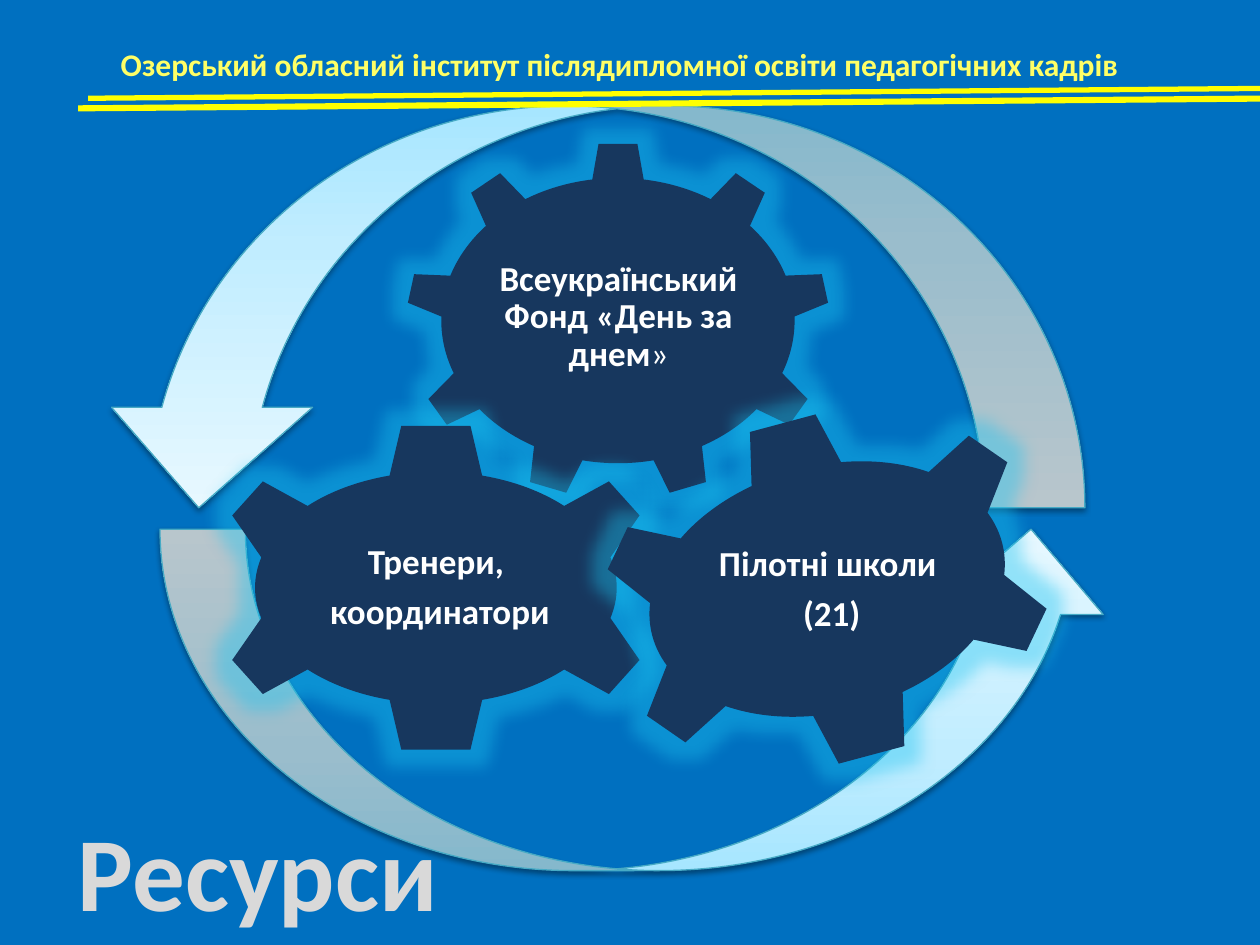
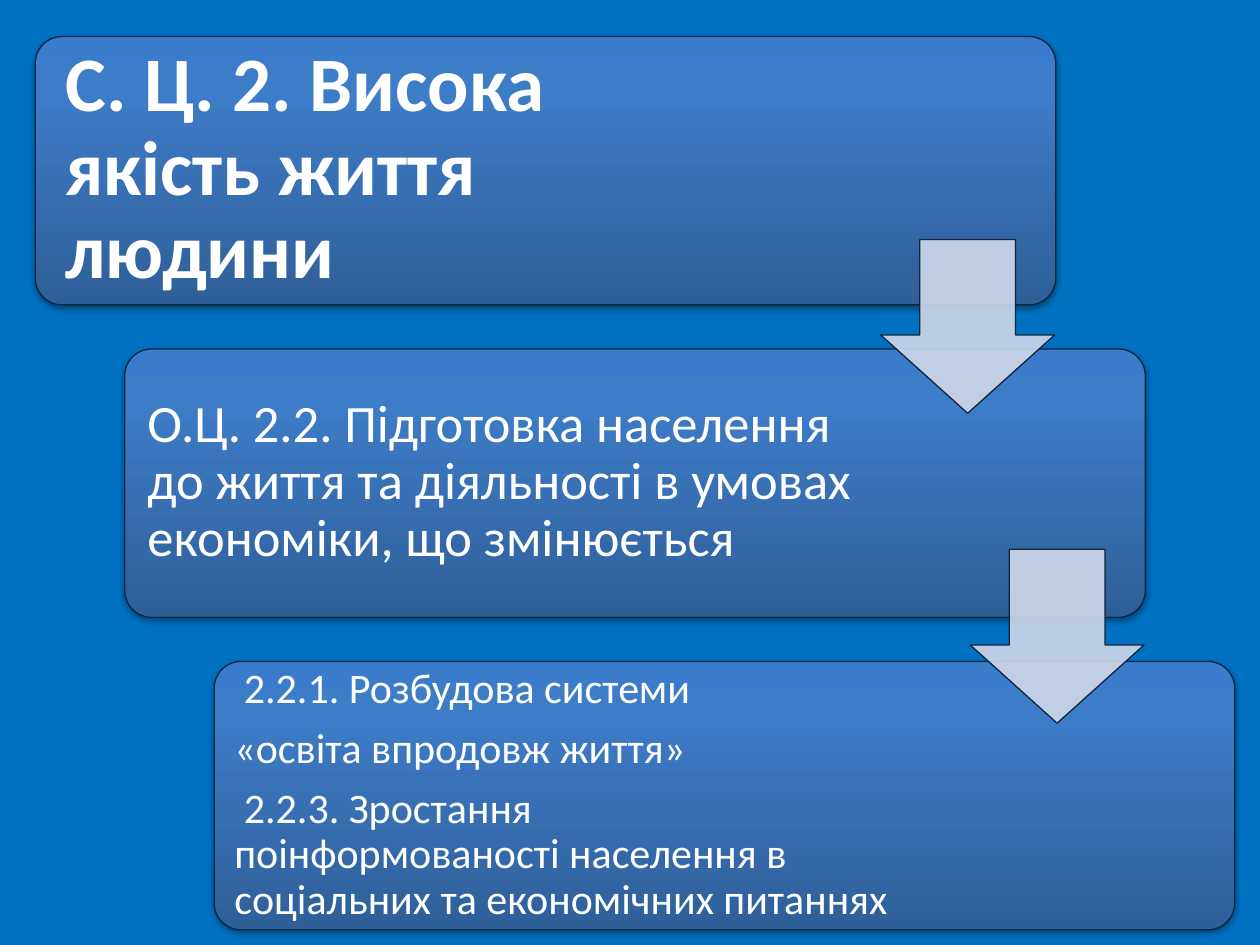
"""Build two slides: a gear cycle of resources and a stepped list of goals."""
from lxml.etree import SubElement
from pptx import Presentation
from pptx.dml.color import RGBColor
from pptx.enum.shapes import MSO_CONNECTOR, MSO_SHAPE
from pptx.enum.text import MSO_ANCHOR, MSO_AUTO_SIZE, PP_ALIGN
from pptx.oxml.ns import qn
from pptx.util import Inches, Pt

BLUE = RGBColor(0x00, 0x70, 0xC0)
NAVY = RGBColor(0x17, 0x37, 0x5E)
INK = RGBColor(0x0F, 0x24, 0x3E)
TEAL = RGBColor(0x46, 0xAA, 0xC5)
CYAN = RGBColor(0x1C, 0xC4, 0xF0)
MIST = RGBColor(0xD0, 0xD8, 0xE8)
GREY = RGBColor(0xD9, 0xD9, 0xD9)
WHITE = RGBColor(0xFF, 0xFF, 0xFF)
BLACK = RGBColor(0x00, 0x00, 0x00)
EDGE = RGBColor(0x00, 0x00, 0x66)
YELLOW = RGBColor(0xFF, 0xFF, 0x00)
LEMON = RGBColor(0xFF, 0xFF, 0x66)
SKY = [(0, RGBColor(0xA7, 0xE6, 0xFF)), (35, RGBColor(0xC1, 0xED, 0xFF)),
       (100, RGBColor(0xE7, 0xF8, 0xFF))]
STEEL = [(0, RGBColor(0x2F, 0x5F, 0x99)), (80, RGBColor(0x3D, 0x7C, 0xC7)),
         (100, RGBColor(0x3A, 0x7C, 0xCB))]
FONT = "Calibri"

HEAD = "Озерський обласний інститут післядипломної освіти педагогічних кадрів"
TITLE = "Ресурси"
RULES = [((0.7, 0.78), (10.23, 0.7), 3), ((0.62, 0.86), (10.31, 0.78), 3.5)]
CYCLE = [((1.27, 4.2, 7.59, 2.71), 0), ((0.78, 0.84, 7.83, 3.19), 180)]
GEARS = [
    (MSO_SHAPE.GEAR_9, (3.22, 1.13, 3.37, 2.83), 0, (3.86, 1.79, 2.1, 1.46),
     [[("Всеукраїнський\nФонд «День за днем", True), ("»", False)]]),
    (MSO_SHAPE.GEAR_6, (1.63, 3.35, 3.66, 2.63), 0, (2.44, 4.02, 2.04, 1.3),
     [[("Тренери,", True)], [(" ", False), ("координатори", True)]]),
    (MSO_SHAPE.GEAR_6, (4.71, 3.28, 3.71, 2.79), 345, (5.58, 3.84, 1.98, 1.68),
     [[("Пілотні школи", True)], [(" (21)", True)]]),
]
GOALS = [
    (44, 5.8, 0.18, [[("С. Ц. 2. Висока якість життя людини", True)]]),
    (30, 5.88, 0.12, [[("О.Ц. 2.2. Підготовка населення до життя та діяльності "
                        "в умовах економіки, що змінюється", False)]]),
    (24, 5.88, 0.1, [
        [(" 2.2.1. Розбудова системи", False)],
        [("«освіта впродовж життя»", False)],
        [(" 2.2.3. Зростання\nпоінформованості населення в соціальних "
          "та економічних питаннях", False)]]),
]


def child(node, tag, **attrs):
    return SubElement(node, qn(tag), {k: str(v) for k, v in attrs.items()})


def tint(node, color, alpha=100):
    clr = child(node, "a:srgbClr", val=color)
    if alpha < 100:
        child(clr, "a:alpha", val=alpha * 1000)


def effect(shape, tag, color, alpha, **attrs):
    shape.shadow.inherit = False
    box = shape.element.spPr.find(qn("a:effectLst"))
    tint(child(box, tag, **attrs), color, alpha)


def draw(slide, kind, box, turn=0, adj=()):
    shape = slide.shapes.add_shape(kind, *map(Inches, box))
    shape.rotation = turn
    shape.shadow.inherit = False
    for i, val in enumerate(adj):
        shape.adjustments[i] = val
    return shape


def paint(shape, color):
    shape.fill.solid()
    shape.fill.fore_color.rgb = color


def edge(shape, color):
    shape.line.color.rgb = color
    shape.line.width = Pt(0.75)


def blend(shape, stops):
    shape.fill.gradient()
    shape.fill.gradient_angle = 90
    steps = shape.element.spPr.find(".//" + qn("a:gsLst"))
    for old in list(steps):
        steps.remove(old)
    for pos, color in stops:
        tint(child(steps, "a:gs", pos=pos * 1000), color)


def shade(shape, alpha, dist):
    effect(shape, "a:outerShdw", BLACK, alpha, blurRad=Pt(3.1), dist=Pt(dist),
           dir=5400000, rotWithShape=0)


def place(shape, box):
    shape.left, shape.top, shape.width, shape.height = map(Inches, box)
    shape.element.getparent().append(shape.element)
    return shape


def label(slide, box):
    return slide.shapes.add_textbox(*map(Inches, box))


def write(shape, paras, size, color, align=PP_ALIGN.LEFT, inset=None,
          wrap=True, tight=True):
    frame = shape.text_frame
    frame.auto_size = MSO_AUTO_SIZE.NONE
    frame.word_wrap = wrap
    frame.vertical_anchor = MSO_ANCHOR.MIDDLE if tight else MSO_ANCHOR.TOP
    if inset is not None:
        frame.margin_left = frame.margin_right = Inches(inset)
        frame.margin_top = frame.margin_bottom = Inches(inset)
    for i, runs in enumerate(paras):
        para = frame.add_paragraph() if i else frame.paragraphs[0]
        para.alignment = align
        para.space_before = Pt(0)
        if tight:
            para.line_spacing = 0.9
            para.space_after = Pt(size * 0.35)
        for text, bold in runs:
            for j, part in enumerate(text.split("\n")):
                if j:
                    para.add_line_break()
                run = para.add_run()
                run.text = part
                font = run.font
                font.name, font.size, font.bold = FONT, Pt(size), bold
                font.color.rgb = color


def cycle(deck):
    slide = deck.slides.add_slide(deck.slide_layouts[5])
    for box, turn in CYCLE:
        arrow = draw(slide, MSO_SHAPE.CURVED_UP_ARROW, box, turn)
        blend(arrow, SKY)
        edge(arrow, TEAL)
        shade(arrow, 38, 1.6)
    title = place(slide.shapes.title, (0, 6.35, 4.09, 1.11))
    write(title, [[(TITLE, True)]], 60, GREY, PP_ALIGN.CENTER, tight=False)
    props = title.element.find(".//" + qn("a:rPr"))
    rim = child(props, "a:ln", w=Pt(1.4))
    tint(child(rim, "a:solidFill"), EDGE)
    props.insert(0, rim)
    for kind, box, turn, area, paras in GEARS:
        gear = draw(slide, kind, box, turn)
        paint(gear, NAVY)
        gear.line.fill.background()
        effect(gear, "a:glow", CYAN, 40, rad=Pt(18))
        write(label(slide, area), paras, 20, WHITE, PP_ALIGN.CENTER, 0.03)
    for start, end, width in RULES:
        rule = slide.shapes.add_connector(
            MSO_CONNECTOR.STRAIGHT, *map(Inches, start + end))
        rule.line.color.rgb = YELLOW
        rule.line.width = Pt(width)
        child(rule.element.spPr, "a:effectLst")
    write(label(slide, (0.86, 0.31, 8.12, 0.4)), [[(HEAD, True)]], 18, LEMON,
          wrap=False, tight=False)


def steps(deck):
    slide = deck.slides.add_slide(deck.slide_layouts[1])
    spots = [(0.28 + 0.71 * i, 0.29 + 2.48 * i) for i in range(len(GOALS))]
    body = slide.placeholders[1]
    holders = {0: slide.shapes.title, len(GOALS) - 1: body}
    for i, (size, width, inset, paras) in enumerate(GOALS):
        left, top = spots[i]
        panel = draw(slide, MSO_SHAPE.ROUNDED_RECTANGLE,
                     (left, top, 8.1, 2.13), adj=[0.1])
        blend(panel, STEEL)
        edge(panel, INK)
        shade(panel, 35, 1.8)
        area = (left + 0.06, top + 0.06, width, 2)
        text = place(holders[i], area) if i in holders else label(slide, area)
        write(text, paras, size, WHITE, inset=inset)
    for para in body.text_frame.paragraphs:
        props = para._p.get_or_add_pPr()
        props.set("marL", "0")
        props.set("indent", "0")
        child(props, "a:buNone")
    for i, (left, top) in enumerate(spots[:-1]):
        arrow = draw(slide, MSO_SHAPE.DOWN_ARROW,
                     (left + 6.71, 1.9 + 2.46 * i, 1.38, 1.38),
                     adj=[0.55, 0.45])
        paint(arrow, MIST)
        clr = arrow.element.spPr.find(qn("a:solidFill"))[0]
        child(clr, "a:alpha", val=90000)
        edge(arrow, INK)


def main():
    deck = Presentation()
    deck.slide_width, deck.slide_height = Inches(10), Inches(7.5)
    paint(deck.slide_master.background, BLUE)
    cycle(deck)
    steps(deck)
    deck.save("out.pptx")


if __name__ == "__main__":
    main()
